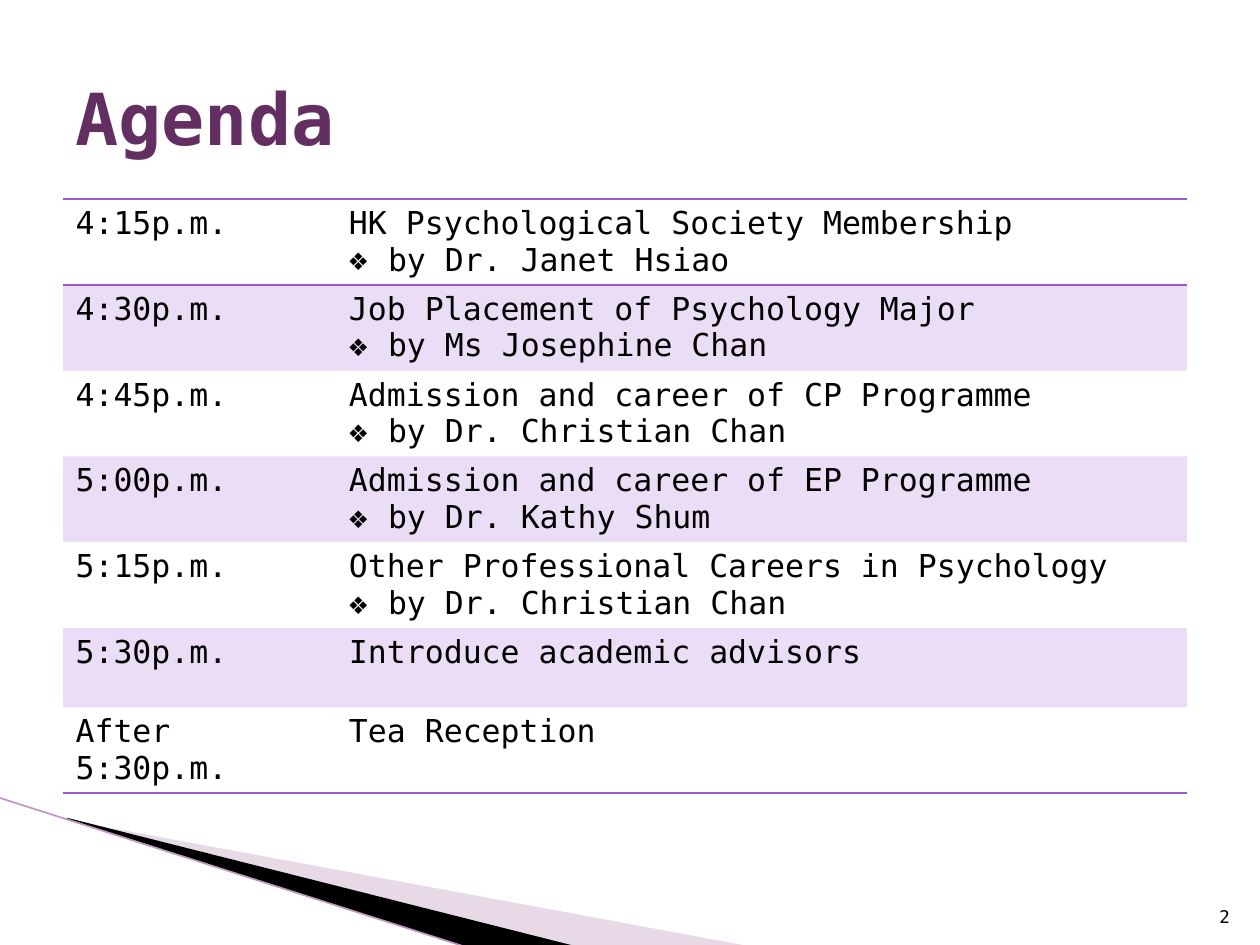
from dataclasses import dataclass

from lxml import etree
from pptx import Presentation
from pptx import util as u
from pptx.dml.color import RGBColor
from pptx.enum import shapes, text
from pptx.oxml import ns


@dataclass(frozen=True)
class Theme:
    font: str = "DejaVu Sans Mono"
    ink: str = "000000"
    heading: str = "632E62"
    accent: str = "9B57D3"
    fan: str = "C4A1C2"
    fan_edge: str = "BD97BC"
    band_opacity: int = 20
    fan_opacity: int = 40
    title_size: int = 41
    body_size: int = 18
    number_size: int = 10
    rule_width: float = 1
    edge_width: float = 0.95
    bullet: str = "❖"
    bullet_indent: float = 0.31
    table_style: str = "{2D5ABB26-0587-4C30-8999-92F81FD0307C}"


class AgendaSlide:
    """Draws the parts of the agenda slide in one theme."""

    def __init__(self, slide, theme):
        self.slide = slide
        self.theme = theme

    def add_child(self, parent, tag, **attributes):
        return etree.SubElement(parent, ns.qn(tag), attributes)

    def paint(self, fill, color, holder, opacity=100):
        fill.solid()
        fill.fore_color.rgb = RGBColor.from_string(color)
        if opacity < 100:
            swatch = holder.find(ns.qn("a:solidFill"))[0]
            self.add_child(swatch, "a:alpha", val=str(opacity * 1000))

    def style(self, paragraph, size, color, bold=False):
        for run in paragraph.runs:
            run.font.name = self.theme.font
            run.font.size = u.Pt(size)
            run.font.bold = bold
            run.font.color.rgb = RGBColor.from_string(color)

    def label(self, words, box, size, color, anchor, align, bold=False):
        frame = self.slide.shapes.add_textbox(*map(u.Inches, box)).text_frame
        frame.word_wrap = True
        frame.vertical_anchor = anchor
        frame.text = words
        frame.paragraphs[0].alignment = align
        self.style(frame.paragraphs[0], size, color, bold)

    def wedge(self, points, color, opacity=100):
        start, *rest = [tuple(map(u.Inches, point)) for point in points]
        builder = self.slide.shapes.build_freeform(*start)
        builder.add_line_segments(rest, close=True)
        wedge = builder.convert_to_shape()
        wedge.shadow.inherit = False
        wedge.line.fill.background()
        self.paint(wedge.fill, color, wedge._element.spPr, opacity)

    def edge(self, start, end):
        edge = self.slide.shapes.add_connector(
            shapes.MSO_CONNECTOR.STRAIGHT, *map(u.Inches, start + end))
        edge.line.color.rgb = RGBColor.from_string(self.theme.fan_edge)
        edge.line.width = u.Pt(self.theme.edge_width)
        self.add_child(edge._element.spPr, "a:effectLst")

    def rule(self, cell, sides):
        properties = cell._tc.get_or_add_tcPr()
        for side in sides:
            line = self.add_child(properties, f"a:ln{side}",
                                  w=str(u.Pt(self.theme.rule_width)))
            fill = self.add_child(line, "a:solidFill")
            self.add_child(fill, "a:srgbClr", val=self.theme.accent)

    def bullet(self, paragraph):
        indent = u.Inches(self.theme.bullet_indent)
        properties = paragraph._p.get_or_add_pPr()
        properties.set("marL", str(indent))
        properties.set("indent", str(-indent))
        self.add_child(properties, "a:buFont", typeface=self.theme.font)
        self.add_child(properties, "a:buChar", char=self.theme.bullet)

    def fill_cell(self, cell, words, banded, sides):
        self.rule(cell, sides)
        if banded:
            self.paint(cell.fill, self.theme.accent, cell._tc.tcPr,
                       self.theme.band_opacity)
        else:
            cell.fill.background()
        cell.text_frame.text = words
        for order, paragraph in enumerate(cell.text_frame.paragraphs):
            if order:
                self.bullet(paragraph)
            self.style(paragraph, self.theme.body_size, self.theme.ink)

    def schedule(self, sessions, box, widths, heights):
        agenda = self.slide.shapes.add_table(
            len(sessions), len(widths), *map(u.Inches, box)).table
        agenda.first_row = agenda.horz_banding = False
        agenda._tbl.tblPr.find(ns.qn("a:tableStyleId")).text = self.theme.table_style
        for column, width in zip(agenda.columns, widths):
            column.width = u.Inches(width)
        ruled = {0: "TB", len(sessions) - 1: "B"}
        for index, (session, height) in enumerate(zip(sessions, heights)):
            agenda.rows[index].height = u.Inches(height)
            for cell, words in zip(agenda.rows[index].cells, session):
                self.fill_cell(cell, words, index % 2 == 1, ruled.get(index, ""))


def main():
    theme = Theme()
    deck = Presentation()
    deck.slide_width, deck.slide_height = u.Inches(10), u.Inches(7.5)
    page = AgendaSlide(deck.slides.add_slide(deck.slide_layouts[6]), theme)

    page.wedge([(0.55, 6.51), (5.95, 7.51), (4.56, 7.51), (0.55, 6.5)],
               theme.fan, theme.fan_opacity)
    page.wedge([(0.53, 6.49), (4.57, 7.51), (3.72, 7.52), (0.54, 6.5)], theme.ink)
    page.edge((-0.01, 6.33), (3.71, 7.52))

    sessions = [
        ("4:15p.m.", "HK Psychological Society Membership\nby Dr. Janet Hsiao"),
        ("4:30p.m.", "Job Placement of Psychology Major\nby Ms Josephine Chan"),
        ("4:45p.m.", "Admission and career of CP Programme\nby Dr. Christian Chan"),
        ("5:00p.m.", "Admission and career of EP Programme\nby Dr. Kathy Shum"),
        ("5:15p.m.", "Other Professional Careers in Psychology\nby Dr. Christian Chan"),
        ("5:30p.m.", "Introduce academic advisors"),
        ("After 5:30p.m.", "Tea Reception"),
    ]
    page.schedule(sessions, (0.5, 1.58, 8.92, 4.64), (2.17, 6.75),
                  [0.63] * 6 + [0.51])
    page.label("Agenda", (0.5, 0.3, 9, 1.25), theme.title_size, theme.heading,
               text.MSO_ANCHOR.MIDDLE, text.PP_ALIGN.LEFT, bold=True)
    page.label("2", (9.46, 7.01, 0.4, 0.4), theme.number_size, theme.ink,
               text.MSO_ANCHOR.BOTTOM, text.PP_ALIGN.RIGHT)
    deck.save("out.pptx")


if __name__ == "__main__":
    main()
